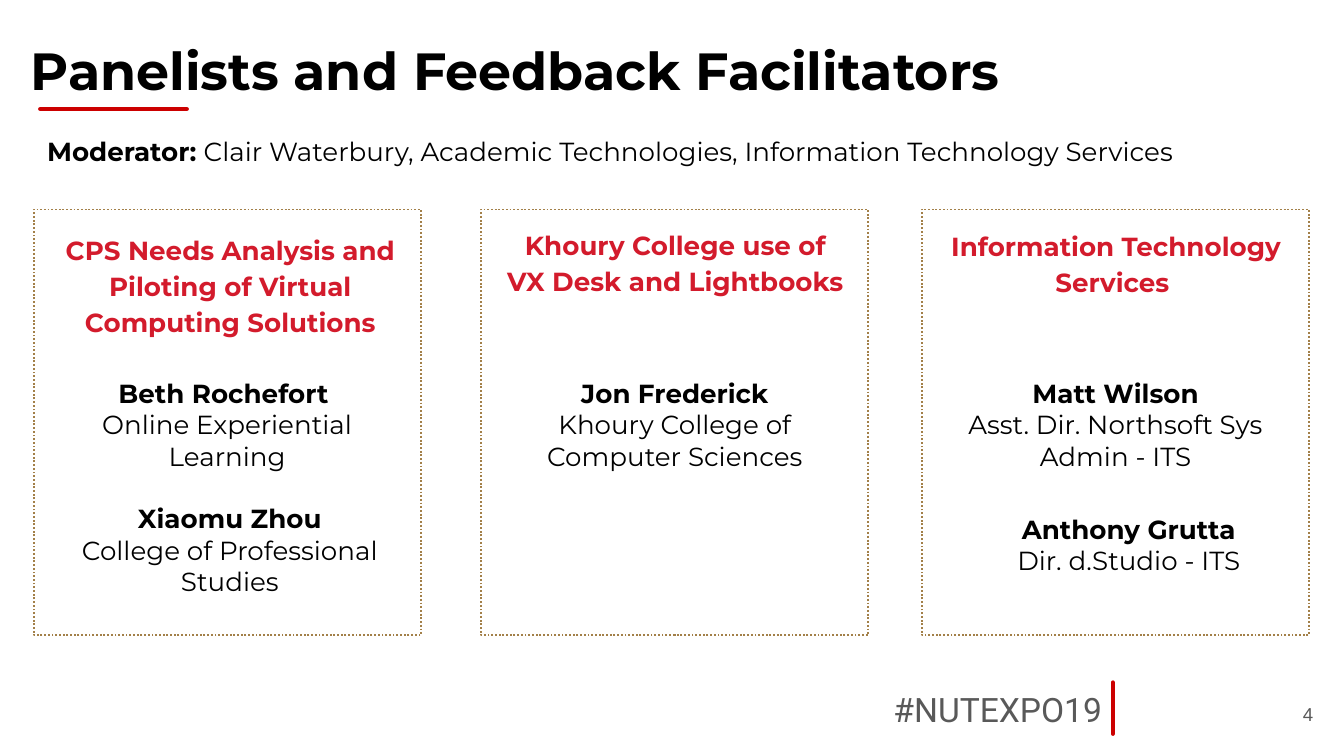
from pptx import Presentation
from pptx.util import Cm, Pt
from pptx.dml.color import RGBColor
from pptx.enum.dml import MSO_LINE
from pptx.enum.shapes import MSO_CONNECTOR, MSO_SHAPE
from pptx.enum.text import MSO_ANCHOR as Anchor, PP_ALIGN as Align
from pptx.oxml.ns import qn
from lxml.etree import SubElement

BLACK = RGBColor(0x00, 0x00, 0x00)
GRAY = RGBColor(0x59, 0x59, 0x59)
RED = RGBColor(0xD3, 0x1B, 0x2C)
RULE = RGBColor(0xCC, 0x00, 0x00)
GOLD = RGBColor(0xA3, 0x80, 0x49)

BODY = {"name": "Montserrat", "size": Pt(14), "bold": False}
BOLD = {**BODY, "bold": True}
TITLE = {**BOLD, "size": Pt(28)}
TAG = {"name": "Roboto", "size": Pt(18)}
PAGE = {"name": "Arial", "size": Pt(10)}

# Lengths in cm
CARD_TOP, CARD_W, CARD_H = 3.96, 7.32, 8.05
HEAD_W, HEAD_H = 6.99, 2.26
NAME_W, NAME_H = 6.81, 2.21

# Card left; heading with its left and top; people with their left and top
cards = [
    (0.64, ("CPS Needs Analysis and Piloting of Virtual Computing Solutions", 0.86, 4.22), [
        ("Beth Rochefort ", "Online Experiential Learning", 0.89, 6.88),
        ("Xiaomu Zhou", "College of Professional Studies", 0.94, 9.25),
    ]),
    (9.09, ("Khoury College use of VX Desk and Lightbooks", 9.27, 4.11), [
        ("Jon Frederick", "Khoury College of Computer Sciences", 9.35, 6.88),
    ]),
    (17.42, ("Information Technology Services ", 17.6, 4.14), [
        ("Matt Wilson", "Asst. Dir. Northsoft Sys Admin - ITS", 17.68, 6.88),
        ("Anthony Grutta", "Dir. d.Studio - ITS", 17.93, 9.45),
    ]),
]
moderator = [
    ("Moderator:", BOLD),
    (" Clair Waterbury, Academic Technologies, Information Technology Services", BODY),
]
rules = [(0.76, 2.06, 3.53, 2.06), (21.03, 12.9, 21.03, 13.87)]

deck = Presentation()
deck.slide_width, deck.slide_height = Cm(25.4), Cm(14.29)
slide = deck.slides.add_slide(deck.slide_layouts[6])
shapes = slide.shapes


def add_text(at, paras, color=BLACK, align=Align.LEFT, space=1.0, pad=0.25, anchor=Anchor.TOP):
    """Add a text box; each paragraph is a list of (text, font format) runs."""
    frame = shapes.add_textbox(*map(Cm, at)).text_frame
    frame.word_wrap = True
    frame.vertical_anchor = anchor
    frame.margin_left = frame.margin_right = Cm(0.25)
    frame.margin_top = frame.margin_bottom = Cm(pad)
    for i, runs in enumerate(paras):
        para = frame.add_paragraph() if i else frame.paragraphs[0]
        para.alignment = align
        para.line_spacing = space
        for text, style in runs:
            run = para.add_run()
            run.text = text
            run.font.color.rgb = color
            for key, value in style.items():
                setattr(run.font, key, value)


def add_rule(ends):
    rule = shapes.add_connector(MSO_CONNECTOR.STRAIGHT, *map(Cm, ends))
    rule.line.color.rgb = RULE
    rule.line.width = Pt(2.25)
    props = rule._element.spPr
    props.find(qn("a:ln")).set("cap", "rnd")
    SubElement(props, qn("a:effectLst"))


def add_card(left):
    card = shapes.add_shape(MSO_SHAPE.RECTANGLE, *map(Cm, (left, CARD_TOP, CARD_W, CARD_H)))
    card.shadow.inherit = False
    card.fill.background()
    card.line.color.rgb = GOLD
    card.line.width = Pt(1)
    card.line.dash_style = MSO_LINE.ROUND_DOT


for ends in rules:
    add_rule(ends)
add_text((15.54, 12.78, 5.54, 1.22), [[("#NUTEXPO19", TAG)]], GRAY, Align.RIGHT)
add_text((0.33, 0.48, 24.71, 1.6), [[("Panelists and Feedback Facilitators", TITLE)]])
add_text((23.55, 12.95, 1.52, 1.09), [[("4", PAGE)]], GRAY, Align.RIGHT, anchor=Anchor.MIDDLE)
add_text((0.64, 2.34, 23.29, 0.89), [moderator], space=1.15, pad=0.13)

for left, (head, x, y), people in cards:
    add_card(left)
    add_text((x, y, HEAD_W, HEAD_H), [[(head, BOLD)]], RED, Align.CENTER, 1.15, 0.13)
    for name, role, x, y in people:
        add_text((x, y, NAME_W, NAME_H), [[(name, BOLD)], [(role, BODY)]], align=Align.CENTER)

deck.save("out.pptx")
